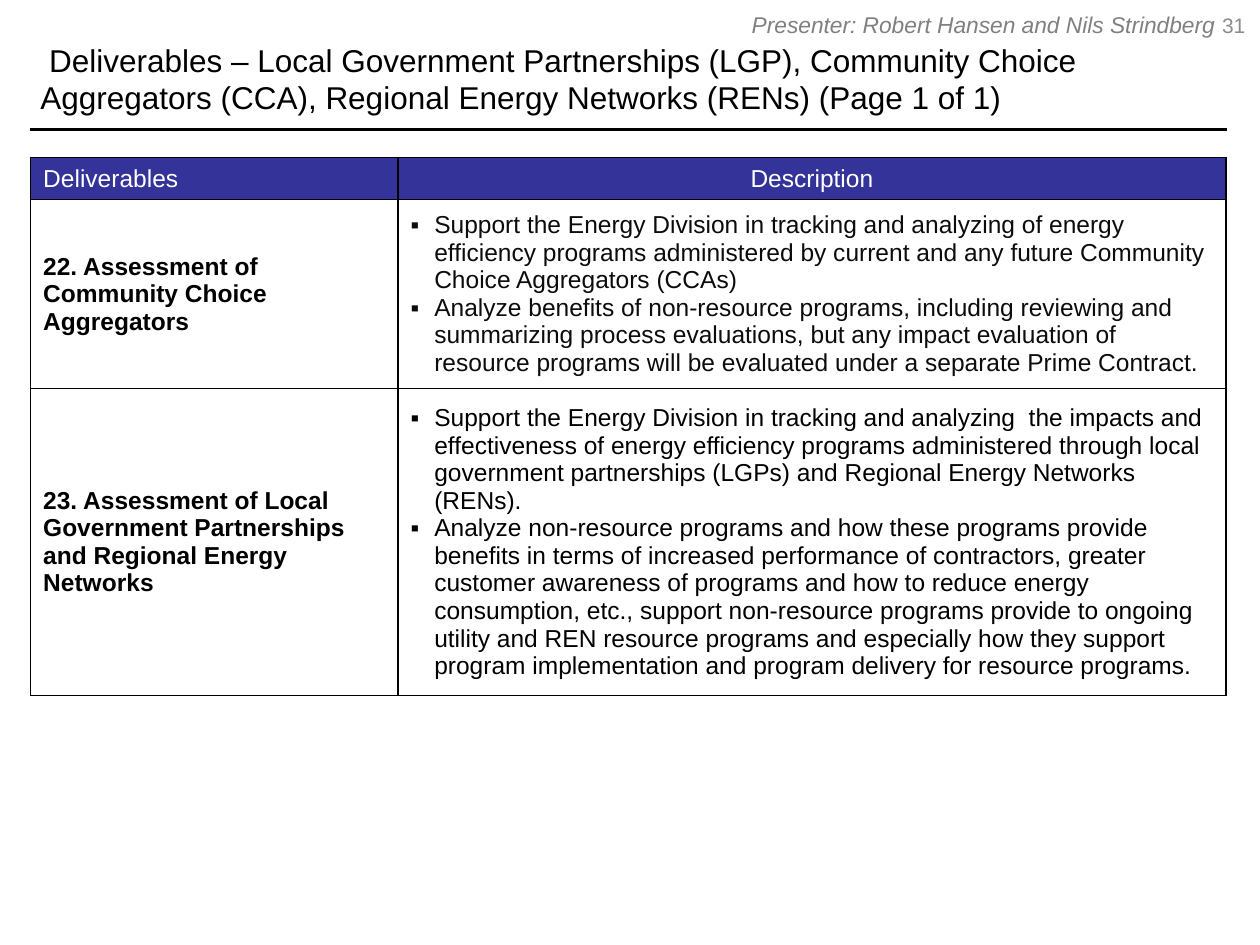
"""Build the deliverables slide with a title, a rule and a two-column table."""
from dataclasses import dataclass

from lxml.etree import SubElement
from pptx import Presentation
from pptx.dml.color import RGBColor
from pptx.enum.shapes import MSO_CONNECTOR as Link
from pptx.enum.text import MSO_ANCHOR as Anchor, PP_ALIGN as Align
from pptx.oxml import parse_xml
from pptx.oxml.ns import nsdecls, qn
from pptx.util import Pt

FONT = "Arial"
BLACK, WHITE, NAVY = "000000", "FFFFFF", "333399"


@dataclass
class Label:
    text: str
    box: tuple[float, float, float, float]
    size: float
    color: str = BLACK
    align: Align = Align.LEFT
    italic: bool = False


@dataclass
class Cell:
    lines: list[str]
    color: str = BLACK
    bold: bool = False
    align: Align = Align.LEFT
    fill: str = ""
    bullet: str = ""


@dataclass
class Row:
    height: float
    cells: list[Cell]


LABELS = [
    Label(" Deliverables – Local Government Partnerships (LGP), Community Choice "
          "Aggregators (CCA), Regional Energy Networks (RENs) (Page 1 of 1)",
          (16, 11, 680, 67.5), 18),
    Label("31", (690, 0, 30, 29), 12, "8C8C8C", Align.CENTER),
    Label("Presenter: Robert Hansen and Nils Strindberg",
          (420, 5, 281, 17.5), 13, "808080", Align.RIGHT, True),
]

COLS = [210, 473]
ROWS = [
    Row(23, [
        Cell(["Deliverables"], WHITE, fill=NAVY),
        Cell(["Description"], WHITE, align=Align.CENTER, fill=NAVY),
    ]),
    Row(101.5, [
        Cell(["22. Assessment of Community Choice Aggregators"], bold=True),
        Cell(["Support the Energy Division in tracking and analyzing of energy "
              "efficiency programs administered by current and any future "
              "Community Choice Aggregators (CCAs)",
              "Analyze benefits of non-resource programs, including reviewing "
              "and summarizing process evaluations, but any impact evaluation "
              "of resource programs will be evaluated under a separate Prime "
              "Contract."], "0C0C0C", bullet="▪"),
    ]),
    Row(164.5, [
        Cell(["23. Assessment of Local Government Partnerships and Regional "
              "Energy Networks"], bold=True),
        Cell(["Support the Energy Division in tracking and analyzing  the "
              "impacts and effectiveness of energy efficiency programs "
              "administered through local government partnerships (LGPs) and "
              "Regional Energy Networks (RENs).",
              "Analyze non-resource programs and how these programs provide "
              "benefits in terms of increased performance of contractors, "
              "greater customer awareness of programs and how to reduce energy "
              "consumption, etc., support non-resource programs provide to "
              "ongoing utility and REN resource programs and especially how "
              "they support program implementation and program delivery for "
              "resource programs."], bullet="▪"),
    ]),
]


def rgb(code: str) -> RGBColor:
    return RGBColor.from_string(code)


def style(para, size: float, color: str, align: Align) -> None:
    para.alignment = align
    font = para.font
    font.name, font.size = FONT, Pt(size)
    font.color.rgb = rgb(color)


def add_label(slide, label: Label) -> None:
    frame = slide.shapes.add_textbox(*map(Pt, label.box)).text_frame
    frame.word_wrap = True
    frame.vertical_anchor = Anchor.MIDDLE
    para = frame.paragraphs[0]
    para.text = label.text
    style(para, label.size, label.color, label.align)
    para.font.italic = label.italic


def add_rule(slide, left: float, right: float, y: float) -> None:
    rule = slide.shapes.add_connector(
        Link.STRAIGHT, Pt(left), Pt(y), Pt(right), Pt(y))
    rule.line.color.rgb = rgb(BLACK)
    rule.line.width = Pt(2)
    SubElement(rule._element.spPr, qn("a:effectLst"))


def add_bullet(para, mark: str) -> None:
    props = para._p.get_or_add_pPr()
    indent = Pt(13.5)
    props.set("marL", str(indent))
    props.set("indent", str(-indent))
    SubElement(props, qn("a:buFont")).set("typeface", FONT)
    SubElement(props, qn("a:buChar")).set("char", mark)
    props.append(props.find(qn("a:defRPr")))


def add_edges(cell) -> None:
    props = cell._tc.get_or_add_tcPr()
    for side in "LRTB":
        props.append(parse_xml(
            f'<a:ln{side} {nsdecls("a")} w="{Pt(1)}"><a:solidFill>'
            f'<a:srgbClr val="{BLACK}"/></a:solidFill></a:ln{side}>'))


def fill_cell(cell, data: Cell) -> None:
    cell.vertical_anchor = Anchor.MIDDLE
    add_edges(cell)
    if data.fill:
        cell.fill.solid()
        cell.fill.fore_color.rgb = rgb(data.fill)
    else:
        cell.fill.background()
    frame = cell.text_frame
    frame.text = "\n".join(data.lines)
    for para in frame.paragraphs:
        style(para, 14, data.color, data.align)
        para.font.bold = data.bold
        if data.bullet:
            add_bullet(para, data.bullet)


def add_grid(slide, left: float, top: float) -> None:
    high = sum(row.height for row in ROWS)
    grid = slide.shapes.add_table(
        len(ROWS), len(COLS), Pt(left), Pt(top), Pt(sum(COLS)), Pt(high)).table
    grid.first_row = grid.horz_banding = False
    for col, width in zip(grid.columns, COLS):
        col.width = Pt(width)
    for line, row in zip(grid.rows, ROWS):
        line.height = Pt(row.height)
        for cell, data in zip(line.cells, row.cells):
            fill_cell(cell, data)


def main() -> None:
    deck = Presentation()
    deck.slide_width, deck.slide_height = Pt(720), Pt(540)
    slide = deck.slides.add_slide(deck.slide_layouts[6])
    for label in LABELS:
        add_label(slide, label)
    add_rule(slide, 17, 701, 74)
    add_grid(slide, 17.5, 90)
    deck.save("out.pptx")


if __name__ == "__main__":
    main()
